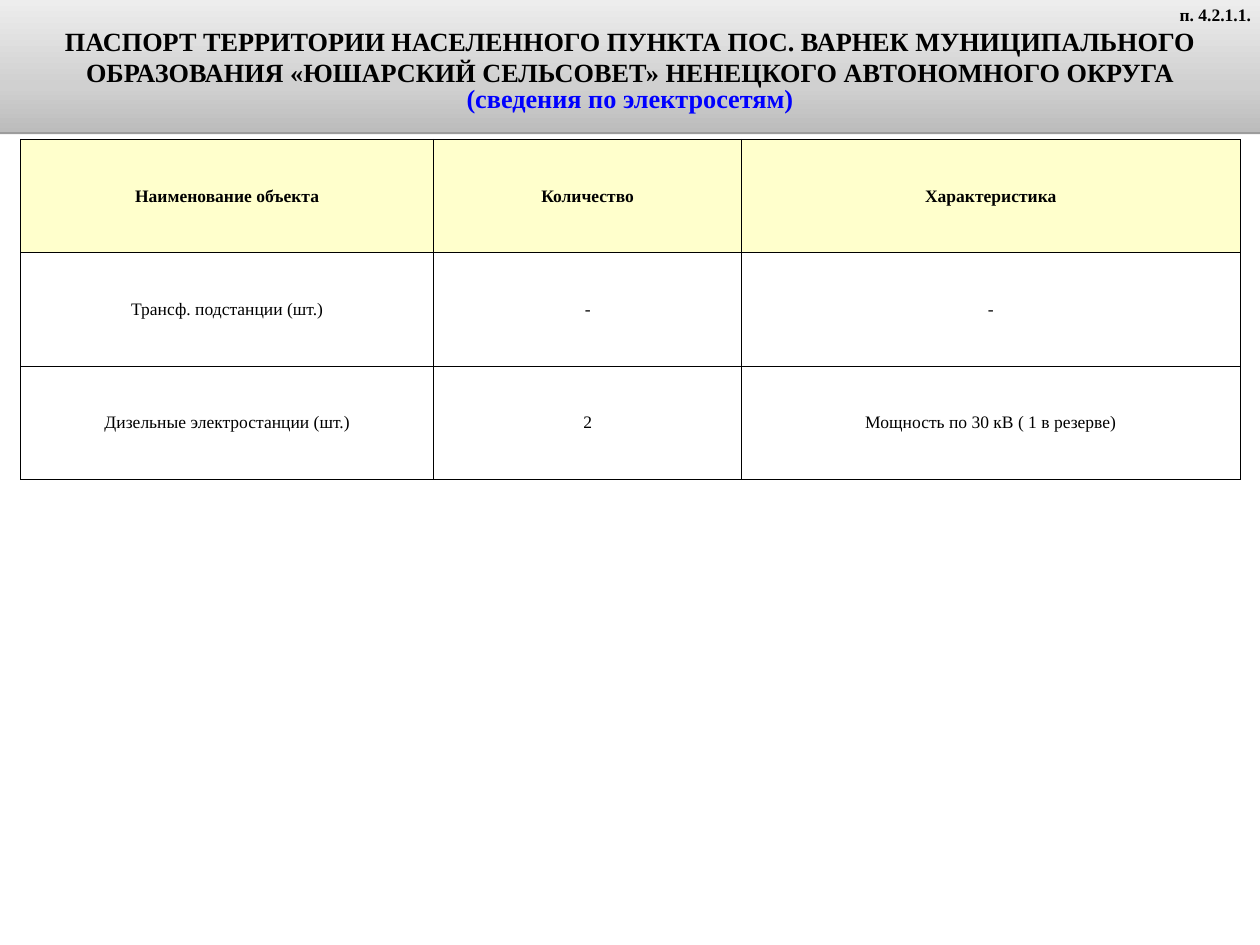
from dataclasses import dataclass

from lxml.etree import SubElement
from pptx import Presentation
from pptx.dml.color import RGBColor
from pptx.enum.shapes import MSO_SHAPE
from pptx.enum.text import MSO_ANCHOR, MSO_AUTO_SIZE, PP_ALIGN
from pptx.oxml.ns import qn
from pptx.util import Inches, Pt


@dataclass(frozen=True)
class Theme:
    font: str = "Times New Roman"
    ink: str = "000000"
    accent: str = "0000FF"
    header_fill: str = "FFFFCC"
    body_fill: str = "FFFFFF"
    banner_stops: tuple = ((0, "BCBCBC"), (35, "D0D0D0"), (100, "EDEDED"))
    title_size: int = 21
    text_size: int = 14
    border_width: float = 1


class PassportSlide:
    """Draws the elements of a settlement passport on one slide."""

    def __init__(self, slide, theme):
        self.slide = slide
        self.theme = theme

    def add_run(self, paragraph, text, size, color, bold):
        run = paragraph.add_run()
        run.text = text
        run.font.name = self.theme.font
        run.font.size = Pt(size)
        run.font.bold = bold
        run.font.color.rgb = RGBColor.from_string(color)

    def add_color(self, parent, color):
        return SubElement(parent, qn("a:srgbClr"), val=color)

    def add_banner(self, width, height, title, subtitle):
        theme = self.theme
        shape = self.slide.shapes.add_shape(
            MSO_SHAPE.RECTANGLE, 0, 0, Inches(width), Inches(height)
        )
        shape.line.fill.background()
        shape.fill.gradient()
        shape.fill.gradient_angle = 90
        properties = shape._element.spPr
        stops = properties.find(qn("a:gradFill")).find(qn("a:gsLst"))
        stops.clear()
        for position, color in theme.banner_stops:
            stop = SubElement(stops, qn("a:gs"), pos=str(position * 1000))
            self.add_color(stop, color)
        shape.shadow.inherit = False
        shadow = SubElement(
            properties.find(qn("a:effectLst")), qn("a:outerShdw"),
            blurRad="0", dist=str(Pt(1.6)), dir="5400000", rotWithShape="0",
        )
        SubElement(self.add_color(shadow, theme.ink), qn("a:alpha"), val="38000")

        frame = shape.text_frame
        frame.word_wrap = True
        frame.vertical_anchor = MSO_ANCHOR.MIDDLE
        frame.margin_top = Inches(0.12)
        heading = frame.paragraphs[0]
        heading.alignment = PP_ALIGN.CENTER
        self.add_run(heading, title, theme.title_size, theme.ink, True)
        note = frame.add_paragraph()
        note.alignment = PP_ALIGN.CENTER
        note.line_spacing = 0.8
        note._p.get_or_add_pPr().set("indent", str(Inches(-0.15)))
        self.add_run(note, subtitle, theme.title_size, theme.accent, True)

    def add_label(self, left, top, width, height, text):
        box = self.slide.shapes.add_textbox(
            Inches(left), Inches(top), Inches(width), Inches(height)
        )
        frame = box.text_frame
        frame.word_wrap = True
        frame.auto_size = MSO_AUTO_SIZE.SHAPE_TO_FIT_TEXT
        paragraph = frame.paragraphs[0]
        paragraph.alignment = PP_ALIGN.RIGHT
        self.add_run(paragraph, text, self.theme.text_size, self.theme.ink, True)

    def add_borders(self, cell):
        properties = cell._tc.get_or_add_tcPr()
        for index, side in enumerate(("lnL", "lnR", "lnT", "lnB")):
            line = SubElement(
                properties, qn(f"a:{side}"), w=str(Pt(self.theme.border_width))
            )
            self.add_color(SubElement(line, qn("a:solidFill")), self.theme.ink)
            properties.insert(index, line)

    def add_table(self, left, top, column_widths, row_height, rows):
        theme = self.theme
        table = self.slide.shapes.add_table(
            len(rows), len(column_widths), Inches(left), Inches(top),
            Inches(sum(column_widths)), Inches(row_height * len(rows)),
        ).table
        table.horz_banding = False
        for column, width in zip(table.columns, column_widths):
            column.width = Inches(width)
        for row_index, texts in enumerate(rows):
            header = row_index == 0
            fill = theme.header_fill if header else theme.body_fill
            for column_index, text in enumerate(texts):
                cell = table.cell(row_index, column_index)
                cell.fill.solid()
                cell.fill.fore_color.rgb = RGBColor.from_string(fill)
                cell.vertical_anchor = MSO_ANCHOR.MIDDLE
                cell.margin_left = cell.margin_right = Inches(0.03)
                cell.margin_top = cell.margin_bottom = Inches(0.03)
                paragraph = cell.text_frame.paragraphs[0]
                paragraph.alignment = PP_ALIGN.CENTER
                self.add_run(paragraph, text, theme.text_size, theme.ink, header)
                self.add_borders(cell)


def main():
    presentation = Presentation()
    presentation.slide_width = Inches(14)
    presentation.slide_height = Inches(10.5)
    slide = presentation.slides.add_slide(presentation.slide_layouts[6])
    passport = PassportSlide(slide, Theme())
    passport.add_banner(
        14, 1.47,
        "ПАСПОРТ ТЕРРИТОРИИ НАСЕЛЕННОГО ПУНКТА ПОС. ВАРНЕК МУНИЦИПАЛЬНОГО "
        "ОБРАЗОВАНИЯ «ЮШАРСКИЙ СЕЛЬСОВЕТ» НЕНЕЦКОГО АВТОНОМНОГО ОКРУГА",
        "(сведения по электросетям)",
    )
    passport.add_table(
        0.23, 1.55, (4.59, 3.42, 5.54), 1.26,
        (
            ("Наименование объекта", "Количество", "Характеристика"),
            ("Трансф. подстанции (шт.)", "-", "-"),
            ("Дизельные электростанции (шт.)", "2", "Мощность по 30 кВ ( 1 в резерве)"),
        ),
    )
    passport.add_label(12.91, 0, 1.09, 0.33, "п. 4.2.1.1.")
    presentation.save("out.pptx")


if __name__ == "__main__":
    main()
